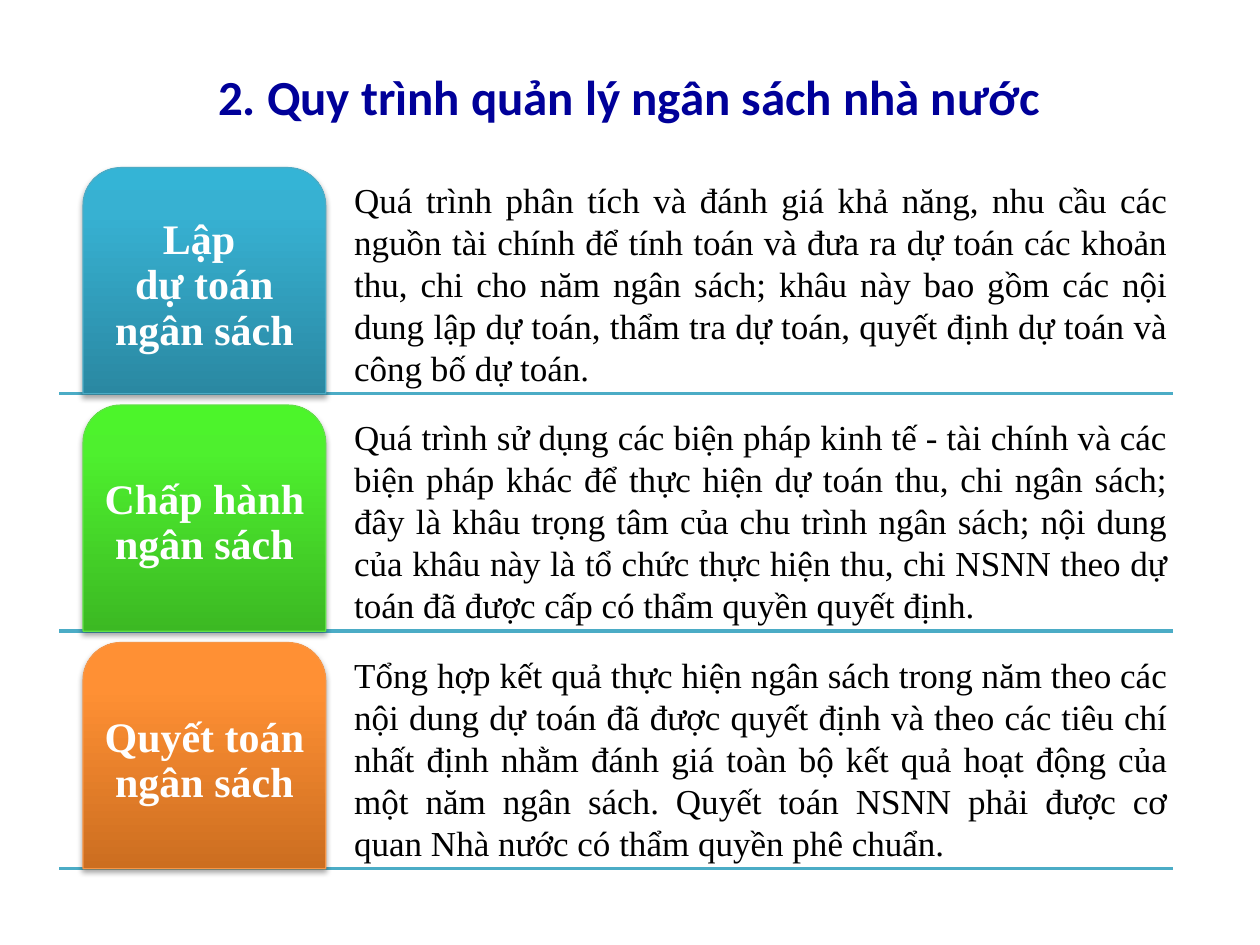
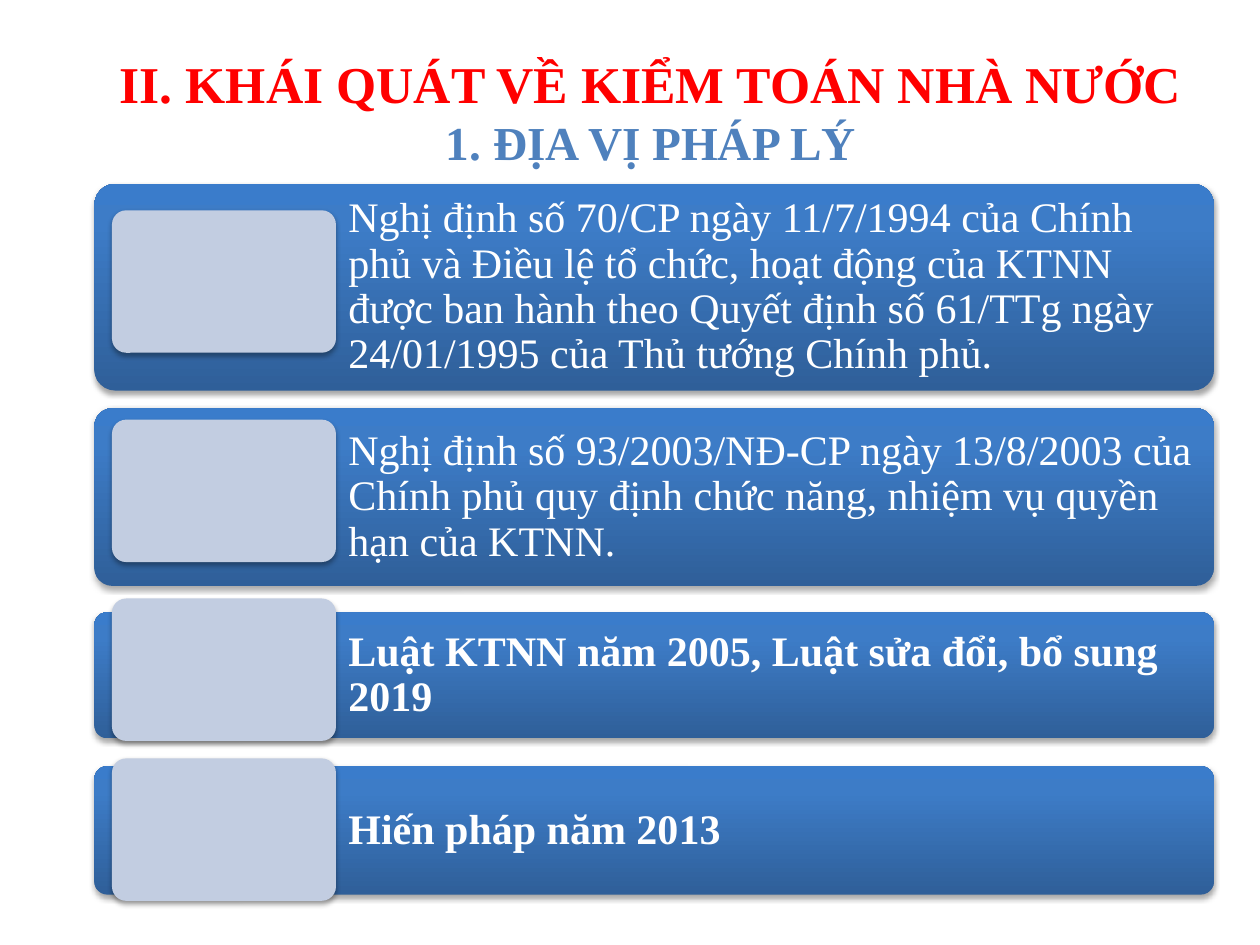
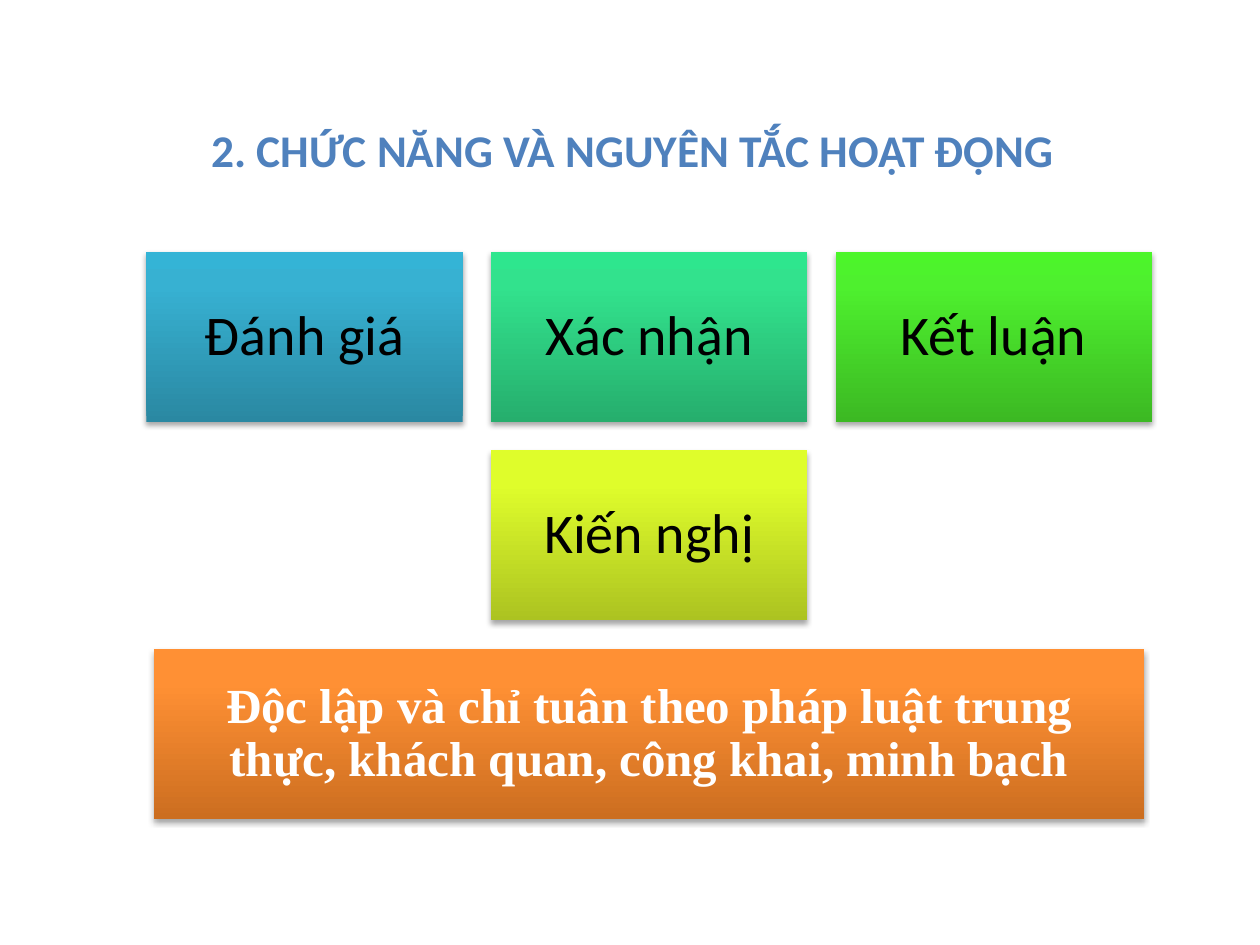
import copy

import pptx
import pptx.dml.color
import pptx.enum.dml
import pptx.enum.shapes
import pptx.enum.text
import pptx.oxml
import pptx.oxml.ns
import pptx.util

Pt = pptx.util.Pt
Shape = pptx.enum.shapes.MSO_SHAPE
Align = pptx.enum.text.PP_ALIGN
Anchor = pptx.enum.text.MSO_ANCHOR
qn = pptx.oxml.ns.qn

SERIF = "Times New Roman"
SANS = "Calibri"
COLORS = {
    "white": "FFFFFF",
    "black": "000000",
    "navy": "000099",
    "red": "FF0000",
    "blue": "4F81BD",
    "teal": "4BACC6",
    "green": "60E146",
    "orange": "F79646",
    "pale": "C2CDE1",
}
# Gradient colours run from the bottom edge to the top edge.
GRADIENTS = {
    "teal": ("2A88A2", "37B1D2", "34B4D6"),
    "mint": ("26AE6D", "32E28D", "2EE68E"),
    "green": ("3CB923", "4EF02E", "4CF52A"),
    "lime": ("ACC321", "DFFD2B", "E1FF2B"),
    "orange": ("CC6E20", "FF9034", "FF9136"),
    "blue": ("2F5F99", "3D7CC7", "3A7CCB"),
}
GRADIENT_POSITIONS = (0, 0.8, 1)
SHADOW = (
    f'<a:outerShdw {pptx.oxml.ns.nsdecls("a")} blurRad="40000" dist="23000" '
    'dir="5400000" rotWithShape="0"><a:srgbClr val="000000">'
    '<a:alpha val="35000"/></a:srgbClr></a:outerShdw>'
)


def rgb(name):
    return pptx.dml.color.RGBColor.from_string(COLORS[name])


def write(paragraph, text, size=24, font=SERIF, color="white", bold=False,
          align=Align.LEFT, spacing=None):
    """Append formatted text; each newline becomes a line break of the same size."""
    paragraph.alignment = align
    paragraph.line_spacing = spacing
    for index, line in enumerate(text.split("\n")):
        if index:
            paragraph.add_line_break()
            line_break = paragraph._p.findall(qn("a:br"))[-1]
            line_break.insert(0, copy.deepcopy(run._r.rPr))
        if line:
            run = paragraph.add_run()
            run.text = line
            run.font.size = Pt(size)
            run.font.name = font
            run.font.bold = bold
            run.font.color.rgb = rgb(color)


class Deck:
    def __init__(self):
        self.presentation = pptx.Presentation()
        self.presentation.slide_width = Pt(720)
        self.presentation.slide_height = Pt(540)
        self.slide = None

    def add_slide(self):
        layout = self.presentation.slide_layouts[5]
        self.slide = self.presentation.slides.add_slide(layout)

    def frame(self, shape, inset, anchor=Anchor.MIDDLE):
        """Set up the text frame and return its first paragraph."""
        text_frame = shape.text_frame
        text_frame.word_wrap = True
        text_frame.auto_size = pptx.enum.text.MSO_AUTO_SIZE.NONE
        text_frame.vertical_anchor = anchor
        text_frame.margin_left = text_frame.margin_right = Pt(inset)
        text_frame.margin_top = text_frame.margin_bottom = Pt(inset)
        return text_frame.paragraphs[0]

    def title(self, box, *parts):
        """Fill the title with (text, size, font, color) parts."""
        shape = self.slide.shapes.title
        shape.left, shape.top, shape.width, shape.height = map(Pt, box)
        paragraph = self.frame(shape, 3.6)
        for text, size, font, color in parts:
            write(paragraph, text, size=size, font=font, color=color,
                  bold=True, align=Align.CENTER)

    def text(self, box, text, inset, anchor=Anchor.MIDDLE, **text_format):
        shape = self.slide.shapes.add_textbox(*map(Pt, box))
        write(self.frame(shape, inset, anchor), text, **text_format)

    def rule(self, left, right, top):
        line = self.slide.shapes.add_connector(
            pptx.enum.shapes.MSO_CONNECTOR.STRAIGHT, Pt(left), Pt(top), Pt(right), Pt(top))
        line.line.color.rgb = rgb("teal")
        line.line.width = Pt(2)
        line._element.spPr.append(pptx.oxml.parse_xml(
            f'<a:effectLst {pptx.oxml.ns.nsdecls("a")}/>'))

    def panel(self, kind, box, gradient=None, fill=None, line=None, corners=()):
        """Add a shadowed shape with a gradient or a plain fill."""
        shape = self.slide.shapes.add_shape(kind, *map(Pt, box))
        for index, corner in enumerate(corners):
            shape.adjustments[index] = corner
        if gradient:
            self.fill_gradient(shape, GRADIENTS[gradient])
        else:
            shape.fill.solid()
            shape.fill.fore_color.rgb = rgb(fill)
        if line:
            shape.line.color.rgb = rgb(line)
            shape.line.width = Pt(0.75)
        else:
            shape.line.fill.background()
        shape.shadow.inherit = False
        effects = shape._element.spPr.find(qn("a:effectLst"))
        effects.append(pptx.oxml.parse_xml(SHADOW))
        return shape

    def fill_gradient(self, shape, colors):
        shape.fill.gradient()
        shape.fill.gradient_angle = 90
        stops = shape._element.spPr.find(f'.//{qn("a:gsLst")}')
        stops.insert(1, copy.deepcopy(stops[0]))
        for stop, position, color in zip(shape.fill.gradient_stops, GRADIENT_POSITIONS, colors):
            stop.position = position
            stop.color.rgb = pptx.dml.color.RGBColor.from_string(color)

    def label(self, shape, text, inset, **text_format):
        write(self.frame(shape, inset), text, align=Align.CENTER, spacing=0.9, **text_format)


def budget_process(deck):
    stages = [
        ("teal", "Lập \ndự toán ngân sách",
         "Quá trình phân tích và đánh giá khả năng, nhu cầu các nguồn tài chính để tính toán "
         "và đưa ra dự toán các khoản thu, chi cho năm ngân sách; khâu này bao gồm các nội "
         "dung lập dự toán, thẩm tra dự toán, quyết định dự toán và công bố dự toán."),
        ("green", "Chấp hành ngân sách",
         "Quá trình sử dụng các biện pháp kinh tế - tài chính và các biện pháp khác để thực "
         "hiện dự toán thu, chi ngân sách; đây là khâu trọng tâm của chu trình ngân sách; nội "
         "dung của khâu này là tổ chức thực hiện thu, chi NSNN theo dự toán đã được cấp có "
         "thẩm quyền quyết định."),
        ("orange", "Quyết toán ngân sách",
         "Tổng hợp kết quả thực hiện ngân sách trong năm theo các nội dung dự toán đã được "
         "quyết định và theo các tiêu chí nhất định nhằm đánh giá toàn bộ kết quả hoạt động "
         "của một năm ngân sách. Quyết toán NSNN phải được cơ quan Nhà nước có thẩm quyền "
         "phê chuẩn."),
    ]
    first_top, pitch, height = 95.8, 135.7, 129.2
    deck.add_slide()
    deck.title((28, 26.6, 663, 56.2),
               ("2. Quy trình quản lý ngân sách nhà nước", 28, SANS, "navy"))
    for index, (color, name, description) in enumerate(stages):
        top = first_top + index * pitch
        deck.rule(34, 670.3, top + height)
        deck.text((199.4, top, 470.9, height), description, 3, Anchor.BOTTOM,
                  size=20, color="black", align=Align.JUSTIFY)
        tab = deck.panel(Shape.ROUND_2_SAME_RECTANGLE, (47.5, top, 138.6, height),
                         gradient=color, line=color, corners=(0.167, 0))
        deck.label(tab, name, 3.6, bold=True)


def legal_status(deck):
    # Band top, band height, tile top, bold, text
    documents = [
        (105.1, 118.1, 120.2, False,
         "Nghị định số 70/CP ngày 11/7/1994 của Chính phủ và Điều lệ tổ chức, hoạt động của "
         "KTNN được ban hành theo Quyết định số 61/TTg ngày 24/01/1995 của Thủ tướng Chính phủ."),
        (233.3, 101.5, 239.8, False,
         "Nghị định số 93/2003/NĐ-CP ngày 13/8/2003 của Chính phủ quy định chức năng, "
         "nhiệm vụ quyền hạn của KTNN."),
        (349.9, 72, 342, True, "Luật KTNN năm 2005, Luật sửa đổi, bổ sung 2019"),
        (437.8, 73.4, 433.4, True, "Hiến pháp năm 2013"),
    ]
    deck.add_slide()
    deck.title((41.8, 24.5, 660.2, 77.8),
               ("II. KHÁI QUÁT VỀ KIỂM TOÁN NHÀ NƯỚC\n", 29.5, SERIF, "red"),
               ("1. ĐỊA VỊ PHÁP LÝ", 27, SERIF, "blue"))
    for top, height, tile_top, bold, text in documents:
        deck.panel(Shape.ROUNDED_RECTANGLE, (54, top, 639.6, height),
                   gradient="blue", corners=(0.1,))
        deck.text((192, top, 501.6, height), text, 7.2, bold=bold, spacing=0.9)
        deck.panel(Shape.ROUNDED_RECTANGLE, (64, tile_top, 128, 81.4),
                   fill="pale", corners=(0.1,))


def functions_and_principles(deck):
    # Column, row, gradient, name
    functions = [
        (0, 0, "teal", "Đánh giá"),
        (1, 0, "mint", "Xác nhận"),
        (2, 0, "green", "Kết luận"),
        (1, 1, "lime", "Kiến nghị"),
    ]
    left, top, width, height, gap = 83.7, 144, 180.7, 97.2, 16.2
    row_pitch = height + gap
    deck.add_slide()
    deck.title((59.8, 66.2, 603.4, 38.9),
               ("2. CHỨC NĂNG VÀ NGUYÊN TẮC HOẠT ĐỘNG", 25.9, SANS, "blue"))
    for column, row, color, name in functions:
        box = (left + column * (width + gap), top + row * row_pitch, width, height)
        tile = deck.panel(Shape.RECTANGLE, box, gradient=color)
        deck.label(tile, name, 9.4, size=32, font=SANS, color="black")
    principle = deck.panel(Shape.RECTANGLE, (87.8, top + 2 * row_pitch, 566, height),
                           gradient="orange")
    deck.label(principle, "Độc lập và chỉ tuân theo pháp luật trung thực, khách quan, "
               "công khai, minh bạch", 8.6, size=28, bold=True)


def main():
    deck = Deck()
    budget_process(deck)
    legal_status(deck)
    functions_and_principles(deck)
    deck.presentation.save("out.pptx")


if __name__ == "__main__":
    main()
